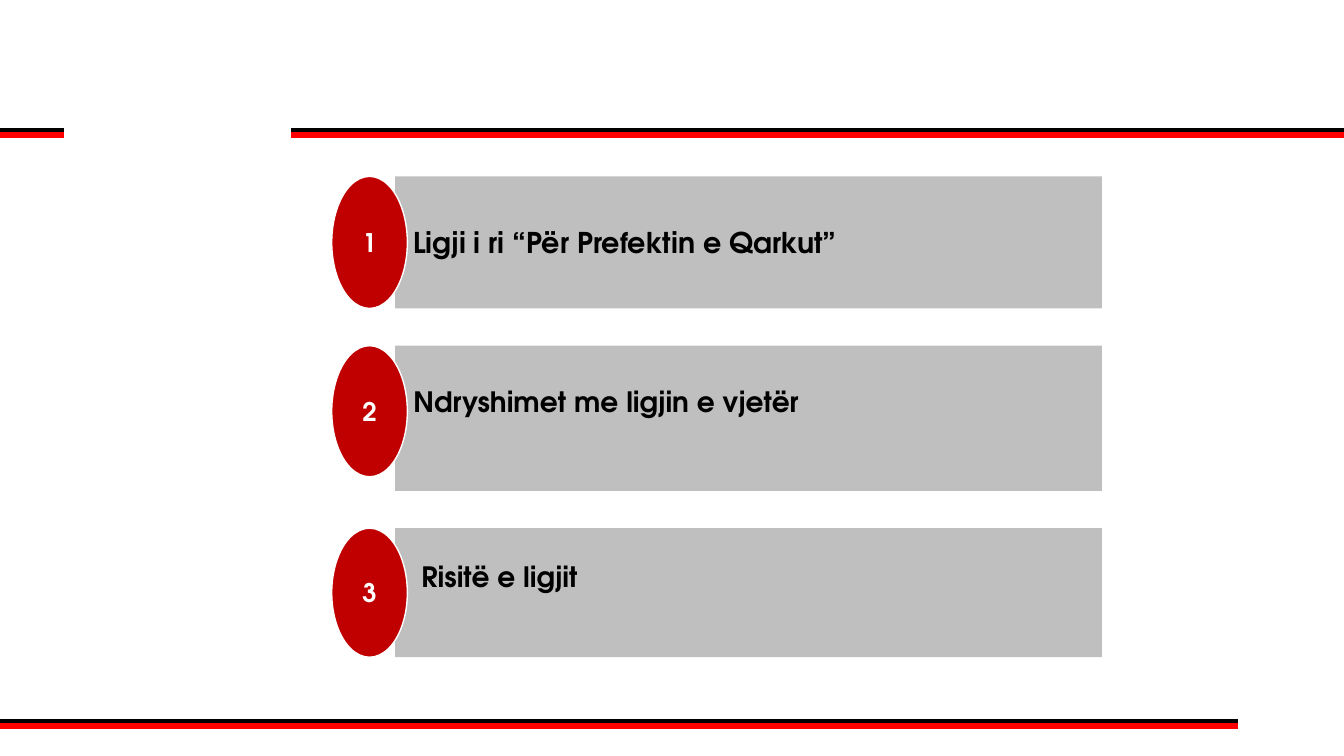
import pptx
import pptx.dml.color
import pptx.enum.shapes
import pptx.enum.text
import pptx.oxml.ns
import pptx.util
from dataclasses import dataclass
from lxml import etree

Inches = pptx.util.Inches
Pt = pptx.util.Pt
SHAPES = pptx.enum.shapes.MSO_SHAPE


@dataclass
class Theme:
    font: str = "TeX Gyre Adventor"
    black: str = "000000"
    white: str = "FFFFFF"
    red: str = "FF0000"
    badge: str = "C00000"
    bar: str = "BFBFBF"
    topic_size: float = 20
    number_size: float = 18.3
    rule_width: float = 4.5


def rgb(value):
    return pptx.dml.color.RGBColor.from_string(value)


def write_text(shape, text, *, font, size, color, centered=False, insets=(0.1, 0.05, 0.1, 0.05)):
    """Write one bold, vertically centred line; insets are left, top, right, bottom."""
    frame = shape.text_frame
    frame.word_wrap = True
    frame.vertical_anchor = pptx.enum.text.MSO_ANCHOR.MIDDLE
    (frame.margin_left, frame.margin_top,
     frame.margin_right, frame.margin_bottom) = map(Inches, insets)
    line = frame.paragraphs[0]
    align = pptx.enum.text.PP_ALIGN
    line.alignment = align.CENTER if centered else align.LEFT
    run = line.add_run()
    run.text = text
    run.font.name = font
    run.font.size = Pt(size)
    run.font.bold = True
    run.font.color.rgb = rgb(color)


class AgendaSlide:
    def __init__(self, deck, theme):
        self.theme = theme
        self.slide = deck.slides.add_slide(deck.slide_layouts[6])

    def rule(self, left, right, y, color):
        line = self.slide.shapes.add_connector(
            pptx.enum.shapes.MSO_CONNECTOR.STRAIGHT,
            Inches(left), Inches(y), Inches(right), Inches(y))
        line.line.color.rgb = rgb(color)
        line.line.width = Pt(self.theme.rule_width)
        etree.SubElement(line._element.spPr, pptx.oxml.ns.qn("a:effectLst"))

    def double_rule(self, left, right, y):
        self.rule(left, right, y, self.theme.black)
        self.rule(left, right, y + 0.04, self.theme.red)

    def block(self, kind, left, top, width, height, fill, outline=None):
        shape = self.slide.shapes.add_shape(
            kind, Inches(left), Inches(top), Inches(width), Inches(height))
        shape.shadow.inherit = False
        shape.fill.solid()
        shape.fill.fore_color.rgb = rgb(fill)
        if outline:
            shape.line.color.rgb = rgb(outline)
            shape.line.width = Pt(1)
        else:
            shape.line.fill.background()
        return shape

    def topic(self, number, text, top, bar_height, badge_height, indent, lift, size):
        theme = self.theme
        bar = self.block(SHAPES.RECTANGLE, 3.92, top, 7.01, bar_height, theme.bar)
        write_text(bar, text, font=theme.font, size=size, color=theme.black,
                   insets=(indent, 0.05, 0.1, 0.05 + lift))
        badge = self.block(SHAPES.OVAL, 3.29, top, 0.75, badge_height,
                           theme.badge, theme.white)
        write_text(badge, str(number), font=theme.font, size=theme.number_size,
                   color=theme.white, centered=True, insets=(0, 0, 0, 0))


def main():
    deck = pptx.Presentation()
    deck.slide_width, deck.slide_height = Inches(13.33), Inches(7.5)
    theme = Theme()
    agenda = AgendaSlide(deck, theme)

    # Header and footer rules
    for left, right, y in ((2.89, 13.33, 1.3), (-0.05, 0.63, 1.3), (-0.05, 12.28, 7.16)):
        agenda.double_rule(left, right, y)

    # Topics: text, top, bar height, badge height, indent, lift, size
    topics = (
        ("Ligji i ri “Për Prefektin e Qarkut”", 1.75, 1.31, 1.31, 0.18, 0, 20.4),
        ("Ndryshimet me ligjin e vjetër", 3.43, 1.44, 1.3, 0.18, 0.33, theme.topic_size),
        ("Risitë e ligjit", 5.24, 1.28, 1.28, 0.26, 0.33, theme.topic_size),
    )
    for number, details in enumerate(topics, start=1):
        agenda.topic(number, *details)

    deck.save("out.pptx")


if __name__ == "__main__":
    main()
